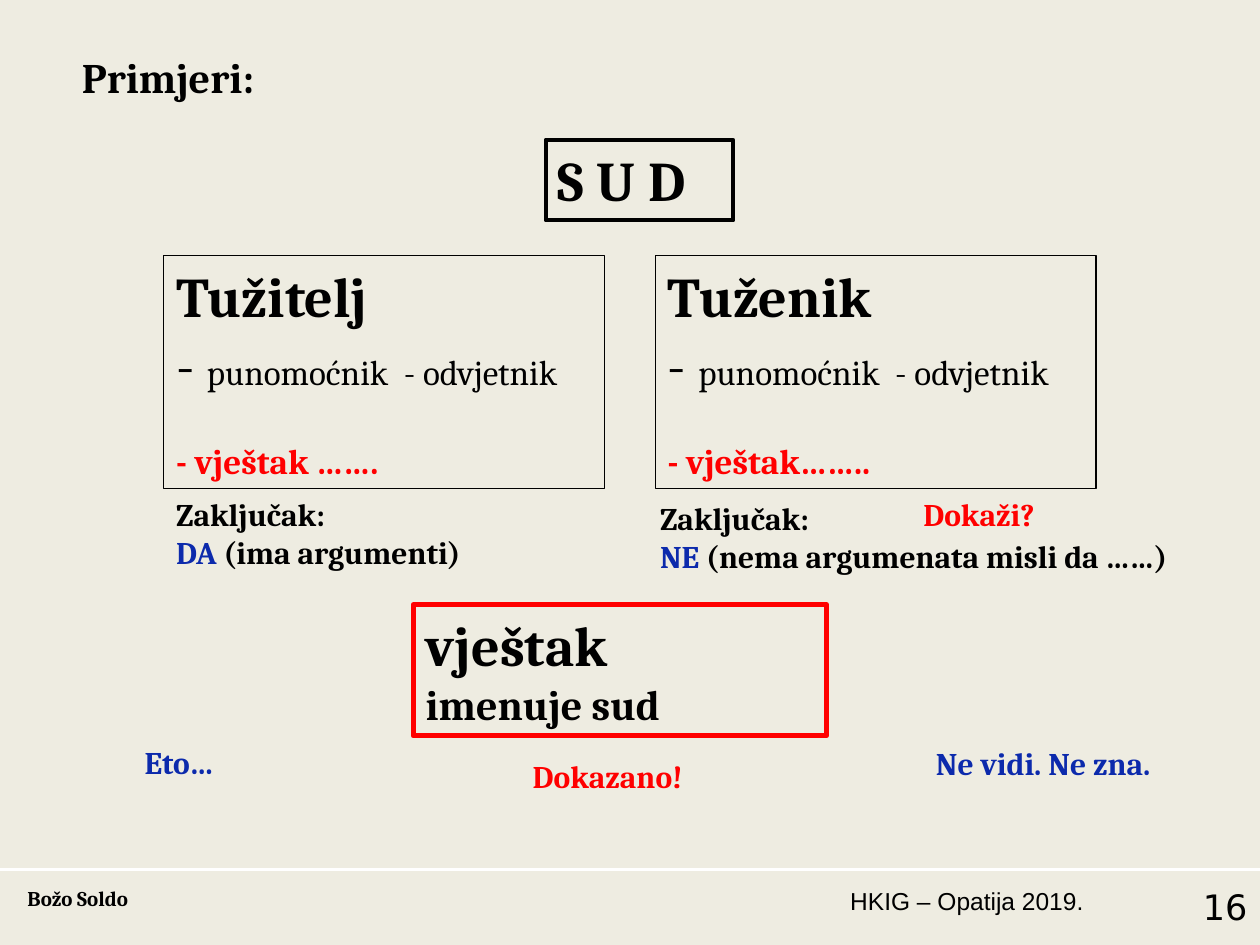
from lxml import etree
from pptx import Presentation
from pptx.dml.color import RGBColor
from pptx.enum.shapes import MSO_CONNECTOR, MSO_SHAPE
from pptx.enum.text import MSO_ANCHOR as ANCHOR, MSO_AUTO_SIZE as AUTO, PP_ALIGN as ALIGN
from pptx.oxml.ns import qn
from pptx.util import Inches, Pt

CREAM = RGBColor(0xEE, 0xEC, 0xE1)
WHITE = RGBColor(0xFF, 0xFF, 0xFF)
BLACK = RGBColor(0, 0, 0)
RED = RGBColor(0xFF, 0, 0)
BLUE = RGBColor(0x0C, 0x2A, 0xAC)

prs = Presentation()
prs.slide_width, prs.slide_height = Inches(10), Inches(7.5)
COL, ROW = prs.slide_width / 100, prs.slide_height / 75
s = prs.slides.add_slide(prs.slide_layouts[5])
s.background.fill.solid()
s.background.fill.fore_color.rgb = CREAM


def grid(x, y, w, h):
    return int(x * COL), int(y * ROW), int(w * COL), int(h * ROW)


def write(sp, paragraphs, size=18, color=BLACK, bold=True, font="Cambria",
          align=ALIGN.LEFT, wrap=True, gap=0):
    tf = sp.text_frame
    tf.word_wrap = wrap
    tf.auto_size = AUTO.NONE if wrap else AUTO.SHAPE_TO_FIT_TEXT
    tf.vertical_anchor = ANCHOR.TOP
    for i, runs in enumerate(paragraphs):
        p = tf.paragraphs[0] if i == 0 else tf.add_paragraph()
        p.alignment = align
        if gap and i == len(paragraphs) - 1:
            p.space_before = Pt(gap)
        for text, fmt in runs:
            r = p.add_run()
            r.text = text
            r.font.name = font
            r.font.size = Pt(fmt.get("size", size))
            r.font.bold = fmt.get("bold", bold)
            r.font.color.rgb = fmt.get("color", color)


rule = s.shapes.add_connector(MSO_CONNECTOR.STRAIGHT, 0, int(69 * ROW),
                              prs.slide_width, int(69 * ROW))
rule.line.color.rgb = WHITE
rule.line.width = Pt(1.5)
etree.SubElement(rule._element.spPr, qn("a:effectLst"))

title = s.shapes.title
title.left, title.top, title.width, title.height = grid(5.5, 3.6, 87, 9.1)
write(title, [[("Primjeri:", {})]], size=24, align=ALIGN.JUSTIFY)

footers = [
    (65.7, 21.3, "HKIG – Opatija 2019.", dict(size=14, font="Arial", bold=False, align=ALIGN.RIGHT)),
    (1.2, 21.7, "Božo Soldo", dict(size=12)),
    (87.8, 12.2, "16", dict(size=20, font="DejaVu Sans", bold=False, align=ALIGN.RIGHT)),
]
for x, w, text, fmt in footers:
    write(s.shapes.add_textbox(*grid(x, 69.8, w, 5.2)), [[(text, {})]], **fmt)

frames = [
    ((43.3, 11.1, 14.9, 6.4), BLACK, 2.25, [[("S U D", {})]], 0),
    ((32.8, 48, 32.8, 10.4), RED, 3,
     [[("vještak", {})], [("imenuje sud", {"size": 24})]], 0),
]
for x, party, expert in [(13, "Tužitelj", "- vještak ……."), (52, "Tuženik", "- vještak……..")]:
    frames.append(((x, 20.3, 35, 18.5), BLACK, 0.75, [
        [(party, {})],
        [("- ", {"bold": False}), ("punomoćnik  - odvjetnik", {"size": 20, "bold": False})],
        [(expert, {"size": 20, "color": RED})],
    ], 24.5))
for area, color, width, paragraphs, gap in frames:
    sp = s.shapes.add_shape(MSO_SHAPE.RECTANGLE, *grid(*area))
    sp.shadow.inherit = False
    sp.fill.background()
    sp.line.color.rgb = color
    sp.line.width = Pt(width)
    write(sp, paragraphs, size=32, gap=gap)

conclusions = [
    ((13, 38.8, 25, 7.1), "DA", " (ima argumenti)"),
    ((51.4, 39.1, 42.8, 7.1), "NE", " (nema argumenata misli da ……)"),
]
for area, verdict, reason in conclusions:
    write(s.shapes.add_textbox(*grid(*area)),
          [[("Zaključak:", {})], [(verdict, {"color": BLUE}), (reason, {})]], wrap=False)

remarks = [
    (72.3, 38.8, 11.8, "Dokaži?", RED),
    (41.3, 59.6, 15, "Dokazano!", RED),
    (10.5, 58.5, 7.7, "Eto…", BLUE),
    (73.3, 58.6, 20, "Ne vidi. Ne zna.", BLUE),
]
for x, y, w, text, color in remarks:
    write(s.shapes.add_textbox(*grid(x, y, w, 4)), [[(text, {})]], color=color, wrap=False)

prs.save("out.pptx")
